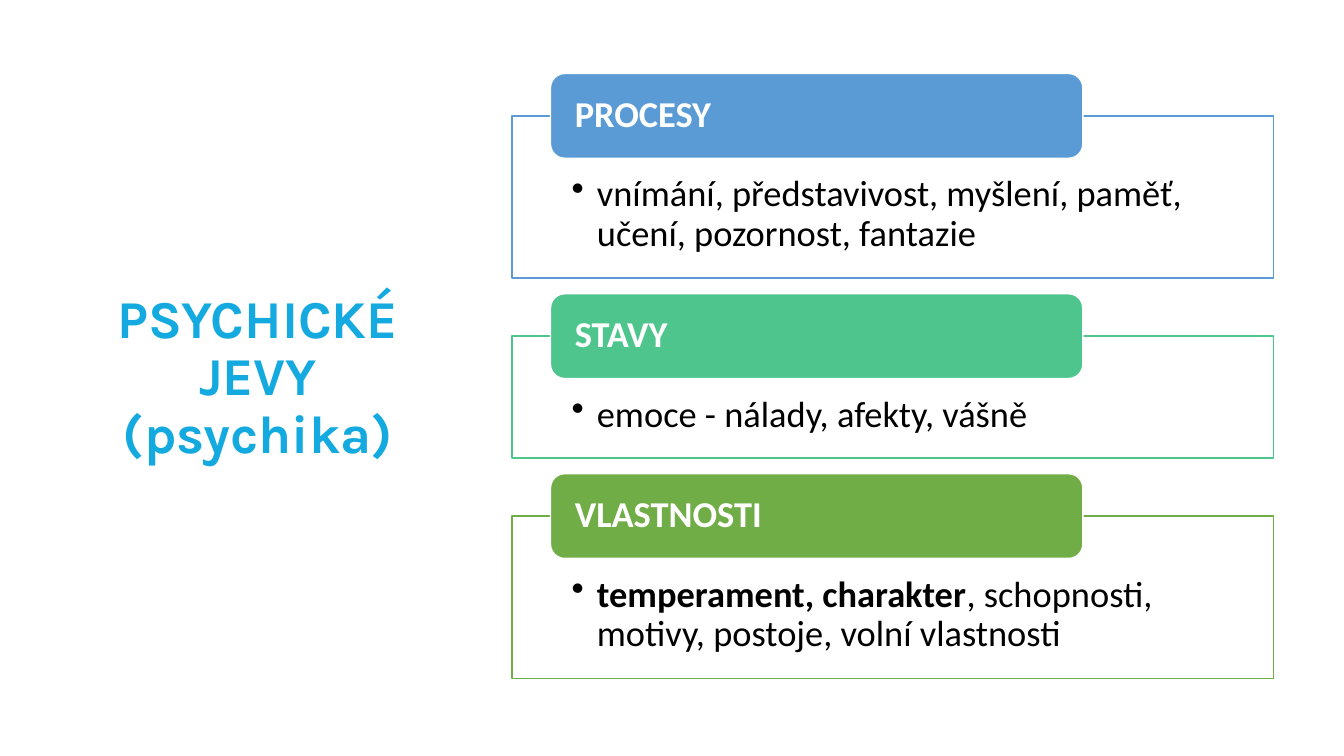
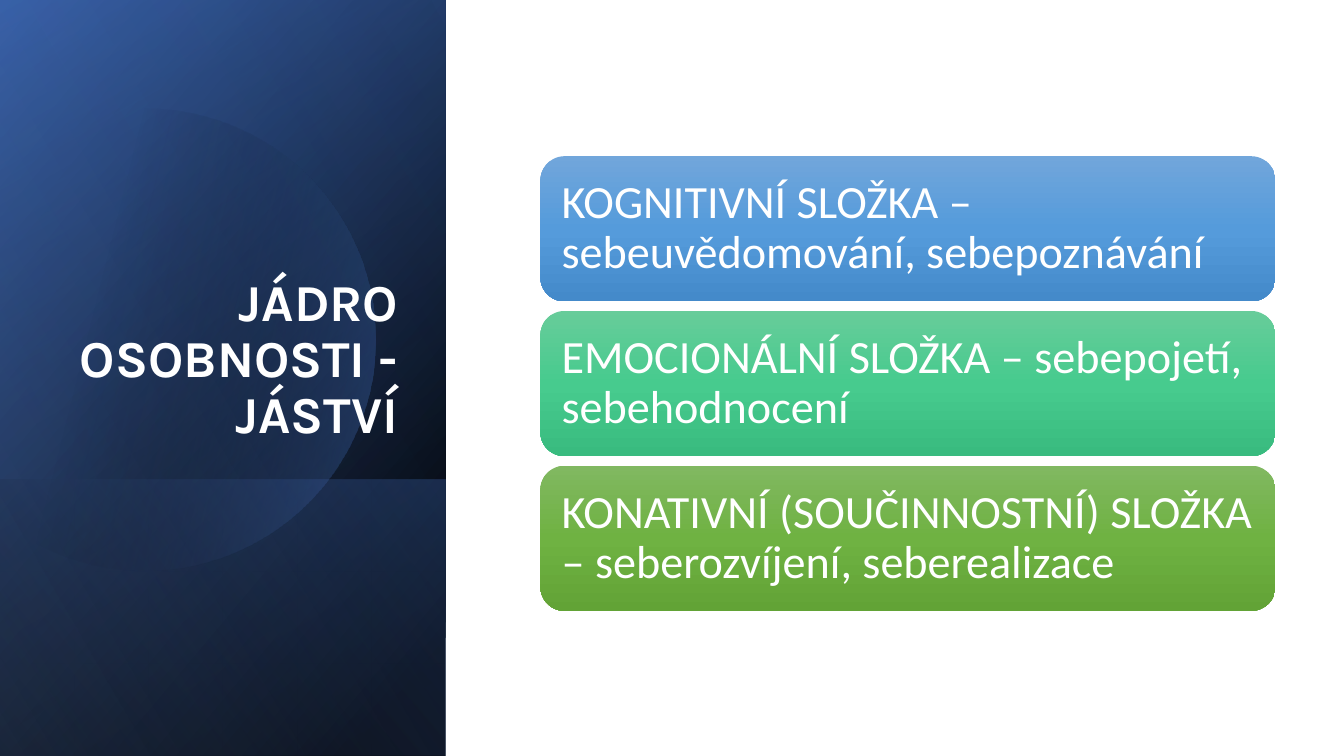
import math
from dataclasses import dataclass

from lxml import etree
from pptx import Presentation
from pptx.dml.color import RGBColor
from pptx.enum.shapes import MSO_SHAPE
from pptx.enum.text import MSO_ANCHOR, MSO_AUTO_SIZE, PP_ALIGN
from pptx.oxml.ns import qn
from pptx.presentation import Presentation as Deck
from pptx.shapes.base import BaseShape
from pptx.slide import Slide
from pptx.text.text import TextFrame
from pptx.util import Inches, Pt

RECTANGLE, ROUNDED = MSO_SHAPE.RECTANGLE, MSO_SHAPE.ROUNDED_RECTANGLE
LEFT, CENTER, RIGHT = PP_ALIGN.LEFT, PP_ALIGN.CENTER, PP_ALIGN.RIGHT
TOP, MIDDLE, BOTTOM = MSO_ANCHOR.TOP, MSO_ANCHOR.MIDDLE, MSO_ANCHOR.BOTTOM
TITLE_ONLY = 5


@dataclass(frozen=True)
class Theme:
    title_font: str = "Karla"
    body_font: str = "Calibri"
    white: str = "FFFFFF"
    black: str = "000000"
    cyan: str = "14AAE0"
    blue: str = "5B9BD5"
    teal: str = "4DC58D"
    green: str = "70AD47"
    navy: str = "2F5597"
    royal: str = "4472C4"
    pale: str = "8FAADC"
    card_size: int = 26
    block_size: int = 33
    line_spacing: float = 0.9


THEME = Theme()
SLIDE_WIDTH, SLIDE_HEIGHT = 13.33, 7.5
PANEL_WIDTH = 4.42


@dataclass(frozen=True)
class Box:
    left: float
    top: float
    width: float
    height: float

    def lengths(self) -> tuple[int, ...]:
        return tuple(Inches(value) for value in
                     (self.left, self.top, self.width, self.height))


@dataclass(frozen=True)
class Stop:
    position: int
    color: str
    opacity: int = 100


@dataclass(frozen=True)
class Gradient:
    angle: int
    stops: tuple[Stop, ...]


@dataclass(frozen=True)
class TextStyle:
    size: int
    color: str
    font: str = THEME.body_font
    bold: bool = False
    align: PP_ALIGN = LEFT
    anchor: MSO_ANCHOR = MIDDLE
    insets: tuple[float, float, float, float] = (0.1, 0.05, 0.1, 0.05)
    bullet: bool = False


@dataclass(frozen=True)
class Card:
    heading: str
    color: str
    lines: int
    text: str
    bold_lead: str = ""


@dataclass(frozen=True)
class Block:
    text: str
    colors: tuple[str, str, str]


@dataclass(frozen=True)
class PanelLayer:
    top: float
    gradient: Gradient


CARDS = (
    Card("PROCESY", THEME.blue, 2,
         "vnímání, představivost, myšlení, paměť, učení, pozornost, fantazie"),
    Card("STAVY", THEME.teal, 1, "emoce - nálady, afekty, vášně"),
    Card("VLASTNOSTI", THEME.green, 2,
         ", schopnosti, motivy, postoje, volní vlastnosti", "temperament, charakter"),
)
BLOCKS = (
    Block("KOGNITIVNÍ SLOŽKA – sebeuvědomování, sebepoznávání",
          ("71A6DB", "559BDB", "448ACA")),
    Block("EMOCIONÁLNÍ SLOŽKA – sebepojetí, sebehodnocení",
          ("67CC9A", "47CB8E", "39BB7F")),
    Block("KONATIVNÍ (SOUČINNOSTNÍ) SLOŽKA – seberozvíjení, seberealizace",
          ("81B861", "6FB242", "62A336")),
)
PANEL_BASE = (
    PanelLayer(0, Gradient(50, (Stop(8, THEME.black), Stop(100, THEME.navy)))),
    PanelLayer(0, Gradient(30, (Stop(0, THEME.black, 0), Stop(99, THEME.royal, 46)))),
    PanelLayer(4.76, Gradient(130, (Stop(2, THEME.royal, 29), Stop(100, THEME.black, 30)))),
)
PANEL_GLOW = PanelLayer(
    0, Gradient(120, (Stop(0, THEME.black, 0), Stop(99, THEME.pale, 11))))
DISC_GRADIENT = Gradient(14, (Stop(29, THEME.black, 0), Stop(100, THEME.royal, 43)))


def rgb(color: str) -> RGBColor:
    return RGBColor.from_string(color)


def fill_gradient(shape: BaseShape, gradient: Gradient) -> None:
    """Replace the shape's fill by a linear gradient with opacities."""
    shape.fill.background()
    properties = shape._element.spPr
    fill = etree.Element(qn("a:gradFill"), rotWithShape="1")
    stop_list = etree.SubElement(fill, qn("a:gsLst"))
    for stop in gradient.stops:
        node = etree.SubElement(stop_list, qn("a:gs"), pos=str(stop.position * 1000))
        color = etree.SubElement(node, qn("a:srgbClr"), val=stop.color)
        if stop.opacity < 100:
            etree.SubElement(color, qn("a:alpha"), val=str(stop.opacity * 1000))
    etree.SubElement(fill, qn("a:lin"), ang=str(gradient.angle * 60000), scaled="0")
    properties.replace(properties.find(qn("a:noFill")), fill)


def write_text(frame: TextFrame, text: str, style: TextStyle, bold_lead: str = "") -> None:
    frame.word_wrap = True
    frame.auto_size = MSO_AUTO_SIZE.NONE
    frame.vertical_anchor = style.anchor
    (frame.margin_left, frame.margin_top,
     frame.margin_right, frame.margin_bottom) = map(Inches, style.insets)
    paragraph = frame.paragraphs[0]
    paragraph.alignment = style.align
    paragraph.line_spacing = THEME.line_spacing
    if style.bullet:
        properties = paragraph._p.get_or_add_pPr()
        properties.set("marL", str(Inches(0.25)))
        properties.set("indent", str(-Inches(0.25)))
        etree.SubElement(properties, qn("a:buChar"), char="•")
    paragraph.font.name = style.font
    paragraph.font.size = Pt(style.size)
    paragraph.font.color.rgb = rgb(style.color)
    paragraph.font.bold = style.bold
    if bold_lead:
        lead = paragraph.add_run()
        lead.text = bold_lead
        lead.font.bold = True
    paragraph.add_run().text = text


def add_box(slide: Slide, kind: MSO_SHAPE, box: Box,
            fill: str | Gradient, line: str | None = None) -> BaseShape:
    shape = slide.shapes.add_shape(kind, *box.lengths())
    shape.shadow.inherit = False
    if isinstance(fill, Gradient):
        fill_gradient(shape, fill)
    else:
        shape.fill.solid()
        shape.fill.fore_color.rgb = rgb(fill)
    if line:
        shape.line.color.rgb = rgb(line)
        shape.line.width = Pt(1)
    else:
        shape.line.fill.background()
    return shape


def set_title(slide: Slide, text: str, box: Box, style: TextStyle) -> None:
    title = slide.shapes.title
    title.left, title.top, title.width, title.height = box.lengths()
    write_text(title.text_frame, text, style)
    # Keep the title in front of the shapes drawn before it
    slide.shapes._spTree.append(title._element)


def add_card(slide: Slide, card: Card, top: float, height: float) -> None:
    """Draw an outlined list with a coloured heading tab on its top edge."""
    body = add_box(slide, RECTANGLE, Box(5.08, top, 7.55, height), THEME.white, card.color)
    write_text(body.text_frame, card.text,
               TextStyle(THEME.card_size, THEME.black, anchor=TOP, bullet=True,
                         insets=(0.59, 0.59, 0.59, 0.2)), card.bold_lead)
    tab = add_box(slide, ROUNDED, Box(5.46, top - 0.42, 5.28, 0.84), card.color, THEME.white)
    write_text(tab.text_frame, card.heading,
               TextStyle(THEME.card_size, THEME.white, bold=True, insets=(0.2, 0, 0.2, 0)))


def add_panel_layer(slide: Slide, layer: PanelLayer) -> None:
    """Draw a panel layer as a mirrored rectangle turned by a quarter."""
    height = SLIDE_HEIGHT - layer.top
    box = Box((PANEL_WIDTH - height) / 2, layer.top + (height - PANEL_WIDTH) / 2,
              height, PANEL_WIDTH)
    shape = add_box(slide, RECTANGLE, box, layer.gradient)
    shape.rotation = 90
    shape._element.spPr.find(qn("a:xfrm")).set("flipH", "1")


def add_disc(slide: Slide) -> None:
    """Draw the disc that the slide's left edge cuts off."""
    center_x, center_y, radius, steps = 1.43, 3.37, 2.29, 120
    reach = math.acos(-center_x / radius)
    angles = [reach * (2 * step / steps - 1) for step in range(steps + 1)]
    points = [(Inches(center_x + radius * math.cos(angle)),
               Inches(center_y + radius * math.sin(angle))) for angle in angles]
    builder = slide.shapes.build_freeform(*points[0])
    builder.add_line_segments(points[1:], close=True)
    disc = builder.convert_to_shape()
    disc.shadow.inherit = False
    fill_gradient(disc, DISC_GRADIENT)
    disc.line.fill.background()


def build_phenomena(presentation: Deck) -> None:
    slide = presentation.slides.add_slide(presentation.slide_layouts[TITLE_ONLY])
    set_title(slide, "PSYCHICKÉ JEVY (psychika)", Box(0.69, 0.7, 3.74, 6.11),
              TextStyle(38, THEME.cyan, THEME.title_font, True, CENTER))
    top = 1.15
    for card in CARDS:
        height = 0.81 + 0.4 * card.lines
        add_card(slide, card, top, height)
        top += height + 0.575


def build_core(presentation: Deck) -> None:
    slide = presentation.slides.add_slide(presentation.slide_layouts[TITLE_ONLY])
    # Dark panel
    for layer in PANEL_BASE:
        add_panel_layer(slide, layer)
    add_disc(slide)
    add_panel_layer(slide, PANEL_GLOW)
    set_title(slide, "JÁDRO OSOBNOSTI - JÁSTVÍ", Box(0.64, 1.84, 3.41, 2.62),
              TextStyle(37, THEME.white, THEME.title_font, True, RIGHT, BOTTOM))
    # Three components
    style = TextStyle(THEME.block_size, THEME.white, insets=(0.14,) * 4)
    for row, block in enumerate(BLOCKS):
        stops = tuple(Stop(50 * index, color) for index, color in enumerate(block.colors))
        shape = add_box(slide, ROUNDED, Box(5.36, 1.55 + 1.535 * row, 7.29, 1.44),
                        Gradient(90, stops))
        write_text(shape.text_frame, block.text, style)


def main() -> None:
    presentation = Presentation()
    presentation.slide_width = Inches(SLIDE_WIDTH)
    presentation.slide_height = Inches(SLIDE_HEIGHT)
    build_phenomena(presentation)
    build_core(presentation)
    presentation.save("out.pptx")


if __name__ == "__main__":
    main()
